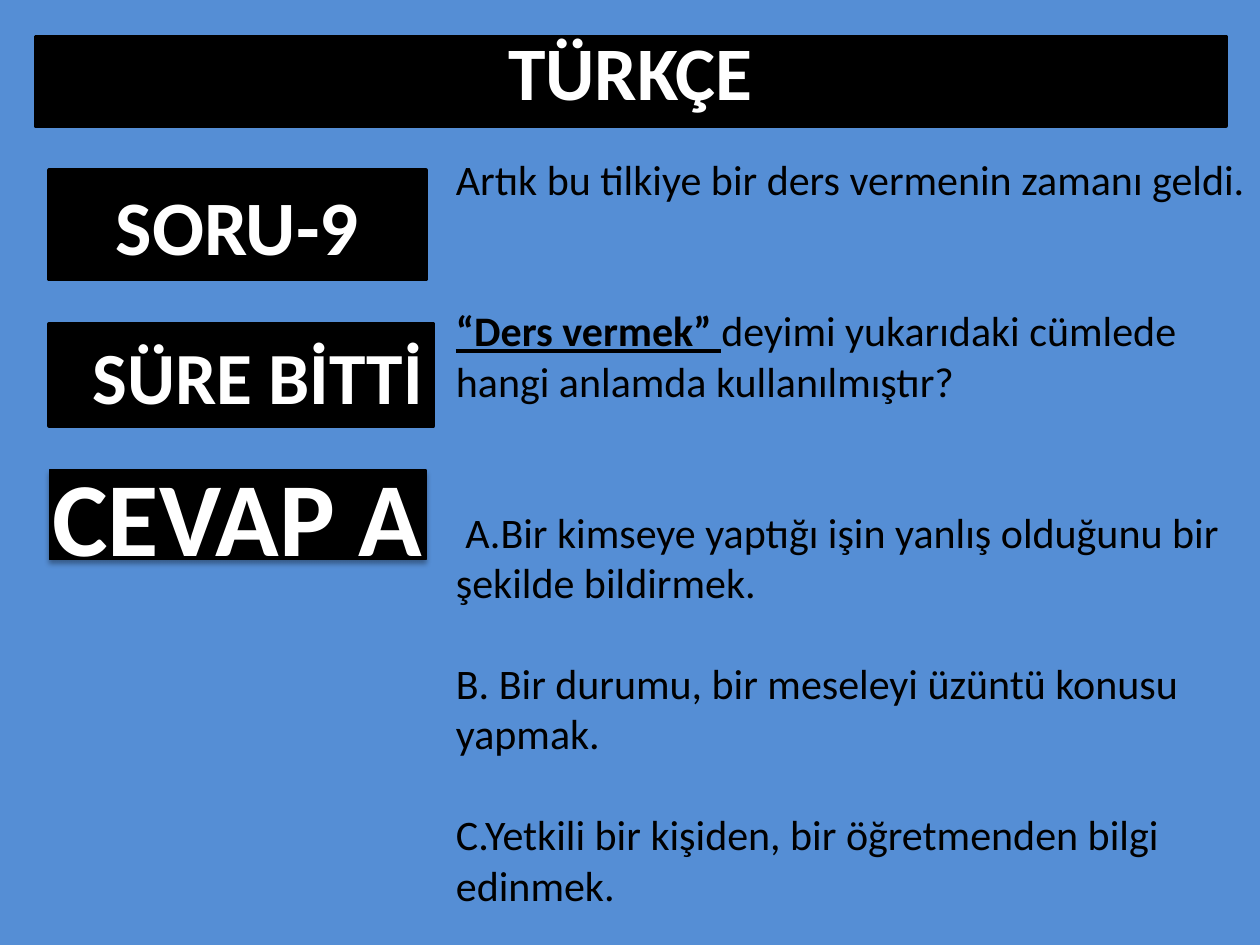
from lxml import etree
from pptx import Presentation
from pptx.dml.color import RGBColor
from pptx.enum.shapes import MSO_SHAPE
from pptx.enum.text import MSO_ANCHOR, PP_ALIGN
from pptx.oxml.ns import qn
from pptx.util import Inches, Pt

RECTANGLE = MSO_SHAPE.RECTANGLE
TOP, MIDDLE = MSO_ANCHOR.TOP, MSO_ANCHOR.MIDDLE
LEFT, CENTER = PP_ALIGN.LEFT, PP_ALIGN.CENTER

FONT = "Calibri"
BLUE, BLACK, WHITE = "558ED5", "000000", "FFFFFF"
LABEL_LEFT = 0.39
BODY_SIZE = 24
BLANK_LINE = 28.8

# Runs as (text, emphasised), then the number of lines left free below
QUESTION = [
    ([("Artık bu tilkiye bir ders vermenin zamanı geldi.", False)], 2),
    ([("“Ders vermek” ", True),
      ("deyimi yukarıdaki cümlede hangi anlamda kullanılmıştır?", False)], 2),
    ([(" A.Bir kimseye yaptığı işin yanlış olduğunu bir şekilde bildirmek.", False)], 1),
    ([("B. Bir durumu, bir meseleyi üzüntü konusu yapmak.", False)], 1),
    ([("C.Yetkili bir kişiden, bir öğretmenden bilgi edinmek.", False)], 0),
]


def color(hex_string):
    return RGBColor.from_string(hex_string)


def add_text(paragraph, text, size=BODY_SIZE, fill=BLACK, bold=False, underline=False,
             align=LEFT):
    paragraph.alignment = align
    run = paragraph.add_run()
    run.text = text
    font = run.font
    font.name, font.size = FONT, Pt(size)
    font.bold, font.underline = bold, underline
    font.color.rgb = color(fill)


def add_label(slide, text, left, top, width, height, size, anchor=MIDDLE, wrap=True,
              border=2, indent=0.1, line_spacing=None):
    """Add a black box with bold white text."""
    label = slide.shapes.add_shape(
        RECTANGLE, Inches(left), Inches(top), Inches(width), Inches(height))
    label.shadow.inherit = False
    label.fill.solid()
    label.fill.fore_color.rgb = color(BLACK)
    label.line.color.rgb = color(BLACK)
    label.line.width = Pt(border)
    frame = label.text_frame
    frame.word_wrap = wrap
    frame.vertical_anchor = anchor
    frame.margin_left = Inches(indent)
    paragraph = frame.paragraphs[0]
    paragraph.line_spacing = line_spacing
    add_text(paragraph, text, size=size, fill=WHITE, bold=True, align=CENTER)
    return label


def add_shadow(shape, blur, distance, opacity):
    """Cast a black shadow straight down."""
    effects = shape._element.spPr.find(qn("a:effectLst"))
    shadow = etree.SubElement(
        effects, qn("a:outerShdw"), blurRad=str(Pt(blur)), dist=str(Pt(distance)),
        dir="5400000", rotWithShape="0")
    shade = etree.SubElement(shadow, qn("a:srgbClr"), val=BLACK)
    etree.SubElement(shade, qn("a:alpha"), val=str(opacity * 1000))


def add_question(slide):
    box = slide.shapes.add_textbox(Inches(3.52), Inches(1.17), Inches(6.48), Inches(6.16))
    frame = box.text_frame
    frame.word_wrap = True
    for index, (runs, blank_lines) in enumerate(QUESTION):
        paragraph = frame.add_paragraph() if index else frame.paragraphs[0]
        paragraph.space_after = Pt(blank_lines * BLANK_LINE)
        for text, emphasised in runs:
            add_text(paragraph, text, bold=emphasised, underline=emphasised)


def main():
    deck = Presentation()
    deck.slide_width, deck.slide_height = Inches(10), Inches(7.5)
    slide = deck.slides.add_slide(deck.slide_layouts[6])
    slide.background.fill.solid()
    slide.background.fill.fore_color.rgb = color(BLUE)

    add_label(slide, "TÜRKÇE", 0.28, 0.29, 9.45, 0.71, size=43.2, anchor=TOP,
              line_spacing=0.8)
    add_label(slide, "SORU-9", LABEL_LEFT, 1.35, 2.99, 0.87, size=44)
    add_label(slide, "SÜRE BİTTİ", LABEL_LEFT, 2.57, 3.05, 0.81, size=42, wrap=False,
              indent=0.36)
    answer = add_label(slide, "CEVAP A", LABEL_LEFT, 3.73, 2.99, 0.71, size=60,
                       wrap=False, border=0.75)
    add_shadow(answer, blur=3.1, distance=1.8, opacity=35)
    add_question(slide)

    deck.save("out.pptx")


if __name__ == "__main__":
    main()
